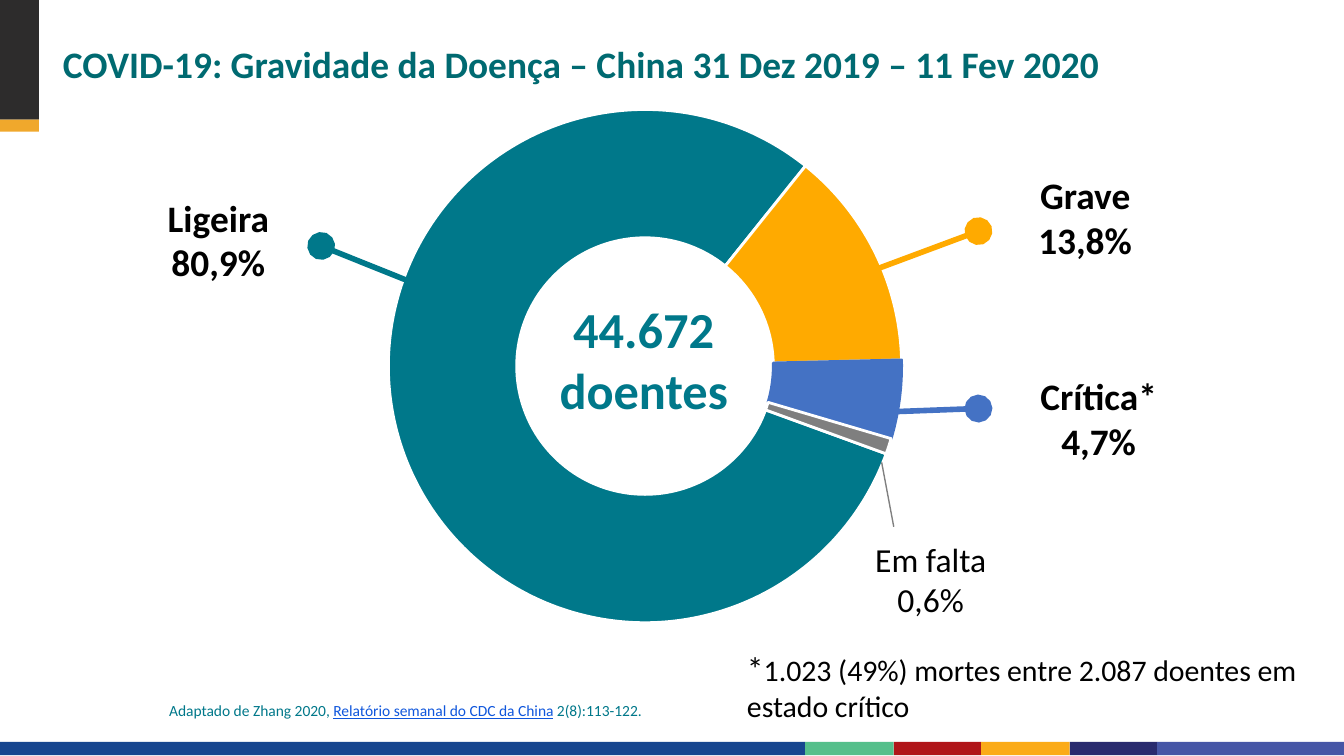
from lxml.etree import SubElement
from pptx import Presentation
from pptx.chart.data import CategoryChartData
from pptx.dml.color import RGBColor
from pptx.enum.chart import XL_CHART_TYPE
from pptx.enum.shapes import MSO_CONNECTOR, MSO_SHAPE
from pptx.enum.text import MSO_ANCHOR, PP_ALIGN
from pptx.oxml.ns import qn
from pptx.util import Pt

PX = 9144
W = 1000
FONT = "Calibri"
TEAL, AMBER, BLUE, GRAY = "00788A", "FFAA00", "4472C4", "7F7F7F"
BLACK, WHITE, LINK = "000000", "FFFFFF", "0F56DC"

BAR_TOP, BAR_H = 552, 10
BAR = [(0, "17468F"), (599, "55BF8B"), (665, "B01519"), (730, "FBAB18"),
       (796, "292B6E"), (861, "4656A6")]
CORNER = [((0, 0, 29, 89), "2D2C2C"), ((0, 89, 29, 9), "F0A82C")]

TITLE = "COVID-19: Gravidade da Doença – China 31 Dez 2019 – 11 Fev 2020"
SOURCE = [("Adaptado de Zhang 2020, ", 8.3, TEAL),
          ("Relatório semanal do CDC da China", 8.3, LINK),
          (" 2(8):113-122.", 8.3, TEAL)]
NOTE = [("*", 18, BLACK),
        ("1.023 (49%) mortes entre 2.087 doentes em estado crítico", 16, BLACK)]

SEVERITY = [("1", 81, TEAL, WHITE), ("2", 14, AMBER, WHITE),
            ("3", 5, BLUE, BLUE), ("4", 1, GRAY, WHITE)]
CHART_BOX = (131, 67, 698, 411)
RING = 382
START_ANGLE, HOLE = 110, 50

LABELS = [
    ("44.672 doentes", (401, 217, 156, 100), 27, TEAL, True),
    ("Crítica* 4,7%", (744, 273, 147, 77), 20, BLACK, True),
    ("Grave 13,8%", (736, 123, 143, 77), 20, BLACK, True),
    ("Ligeira 80,9%", (99, 140, 127, 77), 20, BLACK, True),
    ("Em falta 0,6%", (619, 396, 147, 70), 18, BLACK, False),
]
LEADERS = [
    ((239, 183), (366, 234), TEAL, 3, True),
    ((728, 172), (583, 226), AMBER, 3, True),
    ((728, 304), (647, 307), BLUE, 3, True),
    ((656, 344), (665, 392), "808080", 0.75, False),
]


def emu(values):
    return [v * PX for v in values]


def rgb(value):
    return RGBColor.from_string(value)


def add_rect(s, box, color):
    sp = s.shapes.add_shape(MSO_SHAPE.RECTANGLE, *emu(box))
    sp.shadow.inherit = False
    sp.fill.solid()
    sp.fill.fore_color.rgb = rgb(color)
    sp.line.fill.background()


def add_text(s, box, runs, bold=False, align=PP_ALIGN.LEFT, wrap=True):
    tf = s.shapes.add_textbox(*emu(box)).text_frame
    tf.word_wrap = wrap
    p = tf.paragraphs[0]
    p.alignment = align
    for text, size, color in runs:
        r = p.add_run()
        r.text = text
        r.font.name = FONT
        r.font.size = Pt(size)
        r.font.bold = bold
        r.font.color.rgb = rgb(color)
    return tf


def add_ring(s):
    data = CategoryChartData()
    data.categories = [name for name, *_ in SEVERITY]
    data.add_series("Series 1", [value for _, value, *_ in SEVERITY])
    chart = s.shapes.add_chart(XL_CHART_TYPE.DOUGHNUT, *emu(CHART_BOX), data).chart
    chart.has_legend = False
    chart.has_title = False
    chart.font.name = FONT
    chart.font.size = Pt(10)
    chart.font.color.rgb = rgb(LINK)
    plot = chart.plots[0]
    plot.vary_by_categories = True
    for i, (_, _, color, edge) in enumerate(SEVERITY):
        fmt = plot.series[0].points[i].format
        fmt.fill.solid()
        fmt.fill.fore_color.rgb = rgb(color)
        fmt.line.color.rgb = rgb(edge)
        fmt.line.width = Pt(1.5)

    area = chart.element.find(".//" + qn("c:plotArea"))
    ring = area.find(qn("c:doughnutChart"))
    for tag, value in (("c:firstSliceAng", START_ANGLE), ("c:holeSize", HOLE)):
        ring.find(qn(tag)).set("val", str(value))
    layout = area.find(qn("c:layout"))
    if layout is None:
        layout = area.makeelement(qn("c:layout"))
        area.insert(0, layout)
    manual = SubElement(layout, qn("c:manualLayout"))
    w, h = RING / CHART_BOX[2], RING / CHART_BOX[3]
    for tag, value in (("layoutTarget", "inner"), ("xMode", "edge"), ("yMode", "edge"),
                       ("x", (1 - w) / 2), ("y", (1 - h) / 2), ("w", w), ("h", h)):
        SubElement(manual, qn("c:" + tag)).set("val", str(value))


def add_leader(s, start, end, color, width, dots):
    c = s.shapes.add_connector(MSO_CONNECTOR.STRAIGHT, *emu(start + end))
    c.line.color.rgb = rgb(color)
    c.line.width = Pt(width)
    if dots:
        ln = c._element.spPr.find(qn("a:ln"))
        for tag in ("a:headEnd", "a:tailEnd"):
            dot = SubElement(ln, qn(tag))
            for name, value in (("type", "oval"), ("w", "lg"), ("len", "lg")):
                dot.set(name, value)
    SubElement(c._element.spPr, qn("a:effectLst"))


def main():
    prs = Presentation()
    prs.slide_width = W * PX
    prs.slide_height = W * PX * 9 // 16
    s = prs.slides.add_slide(prs.slide_layouts[6])

    ends = [x for x, _ in BAR[1:]] + [W]
    for (x, color), end in zip(BAR, ends):
        add_rect(s, (x, BAR_TOP, end - x, BAR_H), color)
    for box, color in CORNER:
        add_rect(s, box, color)

    tf = add_text(s, (37, 8, 926, 61), [(TITLE, 20, "006A71")], bold=True)
    tf.vertical_anchor = MSO_ANCHOR.BOTTOM
    tf.paragraphs[0].line_spacing = 0.9
    tf = add_text(s, (116, 517, 394, 24), SOURCE, wrap=False)
    tf.paragraphs[0].runs[1].font.underline = True
    add_text(s, (546, 477, 440, 67), NOTE)

    add_ring(s)
    for text, box, size, color, bold in LABELS:
        add_text(s, box, [(text, size, color)], bold, PP_ALIGN.CENTER)
    for leader in LEADERS:
        add_leader(s, *leader)

    prs.save("out.pptx")


if __name__ == "__main__":
    main()
